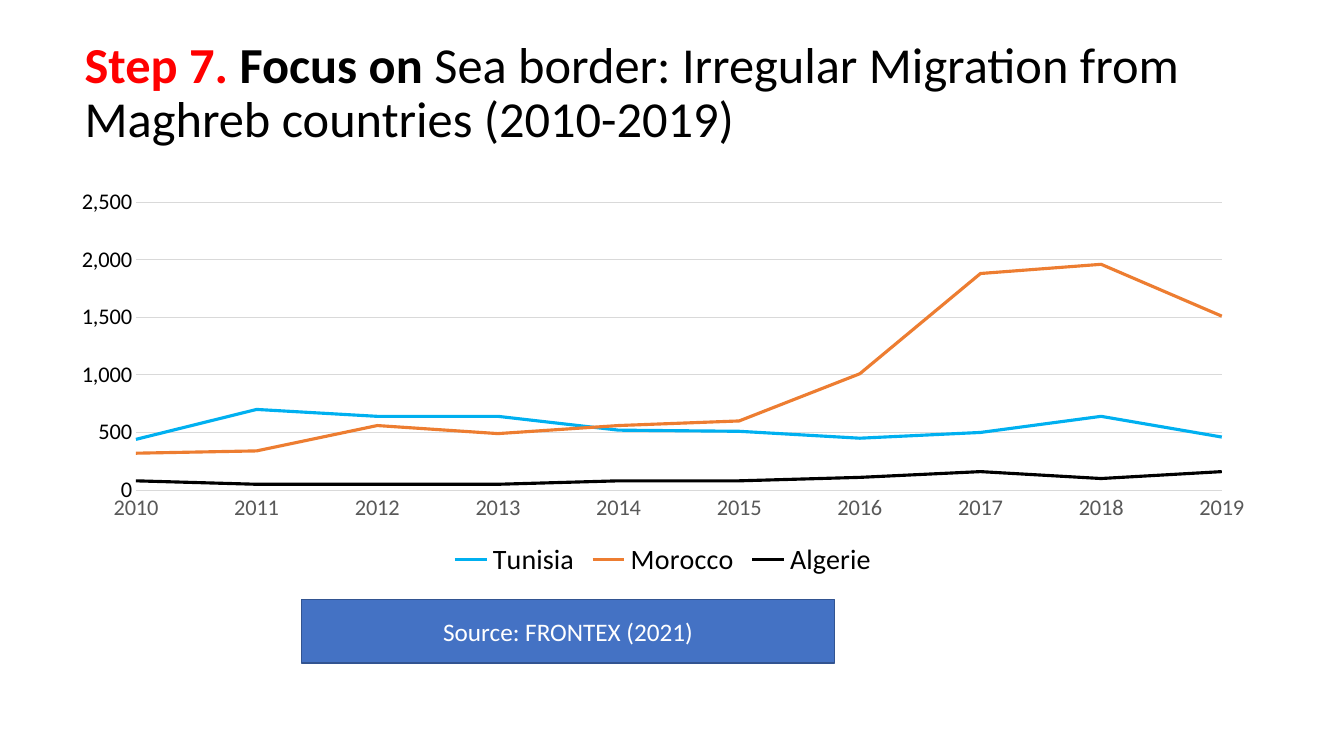
from dataclasses import dataclass

from pptx import Presentation
from pptx import util as u
from pptx.chart.data import CategoryChartData
from pptx.dml.color import RGBColor
from pptx.enum import chart as ch, shapes, text
from pptx.oxml import parse_xml
from pptx.oxml.ns import nsdecls, qn

WIDE, HIGH = u.Inches(13.33), u.Inches(7.5)


@dataclass(frozen=True)
class Theme:
    font: str = "Calibri"
    ink: str = "000000"
    red: str = "FF0000"
    gray: str = "595959"
    grid: str = "D9D9D9"
    fill: str = "4472C4"
    edge: str = "325491"
    white: str = "FFFFFF"
    sky: str = "00B0F0"
    warm: str = "ED7D31"
    head: int = 36
    key: int = 20
    note: int = 18
    axis: int = 16
    base: int = 10


T = Theme()
YEARS = [str(year) for year in range(2010, 2020)]
SERIES = [
    ("Tunisia", T.sky, (440, 700, 640, 640, 520, 510, 450, 500, 640, 460)),
    ("Morocco", T.warm, (320, 340, 560, 490, 560, 600, 1010, 1880, 1960, 1510)),
    ("Algerie", T.ink, (80, 50, 50, 50, 80, 80, 110, 160, 100, 160)),
]


def share(left, top, width, height):
    """Turn percentages of the slide into a box."""
    return [int(part * side / 100) for part, side in
            zip((left, top, width, height), (WIDE, HIGH, WIDE, HIGH))]


def style(font, size, color, bold=False):
    font.name, font.size, font.bold = T.font, u.Pt(size), bold
    font.color.rgb = RGBColor.from_string(color)


def stroke(line, color, width):
    line.color.rgb = RGBColor.from_string(color)
    line.width = u.Pt(width)


def add_title(slide, box):
    title = slide.shapes.title
    title.left, title.top, title.width, title.height = box
    frame = title.text_frame
    frame.word_wrap = True
    frame.auto_size = text.MSO_AUTO_SIZE.NONE
    frame.vertical_anchor = text.MSO_ANCHOR.MIDDLE
    para = frame.paragraphs[0]
    para.alignment = text.PP_ALIGN.LEFT
    para.line_spacing = 0.9
    for words, color, bold in (
        ("Step 7. ", T.red, True),
        ("Focus on ", T.ink, True),
        ("Sea border: Irregular Migration from Maghreb countries (2010-2019)",
         T.ink, False),
    ):
        run = para.add_run()
        run.text = words
        style(run.font, T.head, color, bold)


def format_axes(chart):
    years, count = chart.category_axis, chart.value_axis
    for axis, color in ((years, T.gray), (count, T.ink)):
        axis.major_tick_mark = axis.minor_tick_mark = ch.XL_TICK_MARK.NONE
        style(axis.tick_labels.font, T.axis, color)
    years.has_major_gridlines = False
    stroke(years.format.line, T.grid, 0.75)

    # Lines start on the value axis, not half a category away from it.
    node = count._element
    for old in node.findall(qn("c:crossBetween")):
        node.remove(old)
    node.find(qn("c:crosses")).addnext(
        parse_xml(f'<c:crossBetween {nsdecls("c")} val="midCat"/>'))
    count.minimum_scale, count.maximum_scale, count.major_unit = 0, 2500, 500
    count.format.line.fill.background()
    count.has_major_gridlines = True
    stroke(count.major_gridlines.format.line, T.grid, 0.75)
    count.tick_labels.number_format = "#,##0"
    count.tick_labels.number_format_is_linked = False


def add_trend(slide, box):
    data = CategoryChartData(number_format="#,##0")
    data.categories = YEARS
    for name, _, values in SERIES:
        data.add_series(name, values)
    chart = slide.shapes.add_chart(ch.XL_CHART_TYPE.LINE, *box, data).chart
    style(chart.font, T.base, T.ink)
    chart.has_title = False
    chart.has_legend = True
    chart.legend.position = ch.XL_LEGEND_POSITION.BOTTOM
    chart.legend.include_in_layout = False
    style(chart.legend.font, T.key, T.ink)
    format_axes(chart)
    plot = chart.plots[0]
    plot.vary_by_categories = False
    for series, (_, color, _) in zip(plot.series, SERIES):
        series.smooth = False
        series.marker.style = ch.XL_MARKER_STYLE.NONE
        stroke(series.format.line, color, 2.25)


def add_source(slide, box):
    bar = slide.shapes.add_shape(shapes.MSO_SHAPE.RECTANGLE, *box)
    bar.shadow.inherit = False
    bar.fill.solid()
    bar.fill.fore_color.rgb = RGBColor.from_string(T.fill)
    stroke(bar.line, T.edge, 1)
    frame = bar.text_frame
    frame.text = "Source: FRONTEX (2021)"
    frame.vertical_anchor = text.MSO_ANCHOR.MIDDLE
    para = frame.paragraphs[0]
    para.alignment = text.PP_ALIGN.CENTER
    style(para.runs[0].font, T.note, T.white)


def main():
    deck = Presentation()
    deck.slide_width, deck.slide_height = WIDE, HIGH
    slide = deck.slides.add_slide(deck.slide_layouts.get_by_name("Title Only"))
    add_title(slide, share(5.55, 2.8, 88.75, 19.33))
    add_trend(slide, share(4.28, 23.87, 90.1, 53.2))
    add_source(slide, share(22.43, 79.3, 39.68, 8.4))
    deck.save("out.pptx")


if __name__ == "__main__":
    main()
